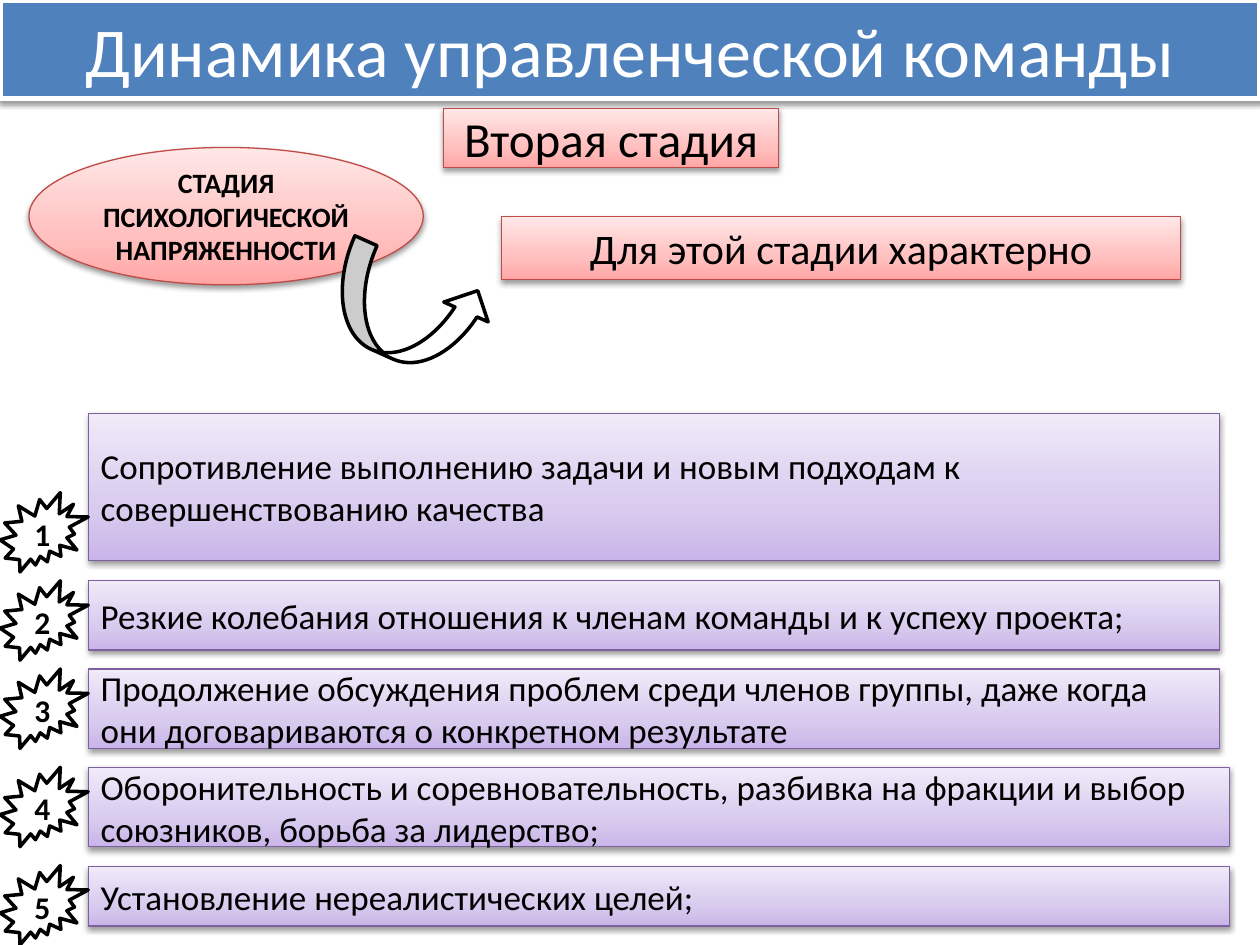
from copy import deepcopy
from dataclasses import dataclass

from lxml.etree import SubElement
from pptx import Presentation
from pptx.dml.color import RGBColor as RGB
from pptx.enum.shapes import MSO_SHAPE as SHAPE
from pptx.enum.text import MSO_ANCHOR as ANCHOR, MSO_AUTO_SIZE as AUTO, PP_ALIGN as ALIGN
from pptx.oxml.ns import qn
from pptx.util import Pt

PX = 9144  # 100 px to the inch
SLIDE_W, SLIDE_H = 1000, 750


@dataclass(frozen=True)
class Theme:
    font: str = "Calibri"
    ink: str = "000000"
    paper: str = "FFFFFF"
    title_fill: str = "4F81BD"
    red: tuple = ("FFA6A5", "FFC0BF", "FFE7E7")
    red_line: str = "BF4C48"
    violet: tuple = ("C9B5E8", "D8CBEE", "F0EAF9")
    violet_line: str = "7D60A0"
    stops: tuple = (0, 0.35, 1)
    title: int = 40
    stage: int = 28
    heading: int = 24
    item: int = 20
    number: int = 18
    oval: int = 16


T = Theme()

# text, top, height, width, top of the number star
FEATURES = [
    ("Сопротивление выполнению задачи и новым подходам к совершенствованию качества",
     328, 117, 898, 391),
    ("Резкие колебания отношения к членам команды и к успеху проекта;",
     461, 55, 898, 461),
    ("Продолжение обсуждения проблем среди членов группы, даже когда "
     "они договариваются о конкретном результате", 531, 63, 898, 531),
    ("Оборонительность и соревновательность, разбивка на фракции и выбор "
     "союзников, борьба за лидерство;", 609, 63, 906, 609),
    ("Установление нереалистических целей;", 688, 47, 906, 687),
]


def set_attrs(obj, **values):
    for name, value in values.items():
        setattr(obj, name, value)


def place(sp, box):
    x, y, w, h = (n * PX for n in box)
    set_attrs(sp, left=x, top=y, width=w, height=h)


def paint(sp, fill, line, weight):
    """Fill with one colour, or with a tuple of gradient colours from the bottom up."""
    if isinstance(fill, tuple):
        sp.fill.gradient()
        sp.fill.gradient_angle = 90
        gs_list = sp._element.spPr.find(".//" + qn("a:gsLst"))
        gs_list.append(deepcopy(gs_list[-1]))
        for stop, color, position in zip(sp.fill.gradient_stops, fill, T.stops):
            stop.color.rgb = RGB.from_string(color)
            stop.position = position
    else:
        sp.fill.solid()
        sp.fill.fore_color.rgb = RGB.from_string(fill)
    sp.line.color.rgb = RGB.from_string(line)
    sp.line.width = Pt(weight)
    sp.shadow.inherit = False


def cast_shadow(sp):
    effects = sp._element.spPr.find(qn("a:effectLst"))
    shadow = SubElement(effects, qn("a:outerShdw"), blurRad="40000", dist="20000",
                        dir="5400000", rotWithShape="0")
    color = SubElement(shadow, qn("a:srgbClr"), val=T.ink)
    SubElement(color, qn("a:alpha"), val="38000")


def write(sp, text, size, color=T.ink, bold=False, align=ALIGN.CENTER, anchor=ANCHOR.MIDDLE):
    tf = sp.text_frame
    set_attrs(tf, word_wrap=True, auto_size=AUTO.NONE, vertical_anchor=anchor)
    p = tf.paragraphs[0]
    p.alignment = align
    r = p.add_run()
    r.text = text
    set_attrs(r.font, name=T.font, size=Pt(size), bold=bold)
    r.font.color.rgb = RGB.from_string(color)


def add_shape(slide, kind, box, fill, line, weight):
    sp = slide.shapes.add_shape(kind, 0, 0, 0, 0)
    place(sp, box)
    paint(sp, fill, line, weight)
    return sp


def add_panel(slide, kind, box, fill, line, text, size, **text_format):
    sp = add_shape(slide, kind, box, fill, line, 0.75)
    cast_shadow(sp)
    write(sp, text, size, **text_format)


def add_title(slide, box):
    sp = slide.shapes.title
    place(sp, box)
    paint(sp, T.title_fill, T.paper, 3)
    cast_shadow(sp)
    write(sp, "Динамика управленческой команды", T.title, T.paper)


def add_stage(slide, box):
    """The stage name, its oval, the heading of the list and the arrow between them."""
    x, y, w, h = box
    red = T.red, T.red_line
    add_panel(slide, SHAPE.OVAL, (x, y + 31, 313, 109), *red,
              "СТАДИЯ ПСИХОЛОГИЧЕСКОЙ НАПРЯЖЕННОСТИ", T.oval, bold=True)
    arrow = add_shape(slide, SHAPE.CURVED_RIGHT_ARROW, (x + 262, y + 99, 77, 126),
                      T.paper, T.ink, 2)
    arrow.rotation = 294.1
    add_panel(slide, SHAPE.RECTANGLE, (x + 329, y, 266, 47), *red,
              "Вторая стадия", T.stage)
    add_panel(slide, SHAPE.RECTANGLE, (x + w - 539, y + 86, 539, 50), *red,
              "Для этой стадии характерно", T.heading, anchor=ANCHOR.TOP)


def add_features(slide, left, star_w, star_h):
    for number, (text, top, height, width, star_top) in enumerate(FEATURES, 1):
        add_panel(slide, SHAPE.RECTANGLE, (left + star_w, top, width, height),
                  T.violet, T.violet_line, text, T.item, align=ALIGN.LEFT)
        star = add_shape(slide, SHAPE.EXPLOSION2, (left, star_top, star_w, star_h),
                         T.paper, T.ink, 2)
        write(star, str(number), T.number, bold=True)


def main():
    prs = Presentation()
    set_attrs(prs, slide_width=SLIDE_W * PX, slide_height=SLIDE_H * PX)
    slide = prs.slides.add_slide(prs.slide_layouts.get_by_name("Title Only"))
    add_title(slide, (0, 0, SLIDE_W, 78))
    add_stage(slide, (23, 86, 914, 225))
    add_features(slide, 0, 70, 63)
    prs.save("out.pptx")


if __name__ == "__main__":
    main()
